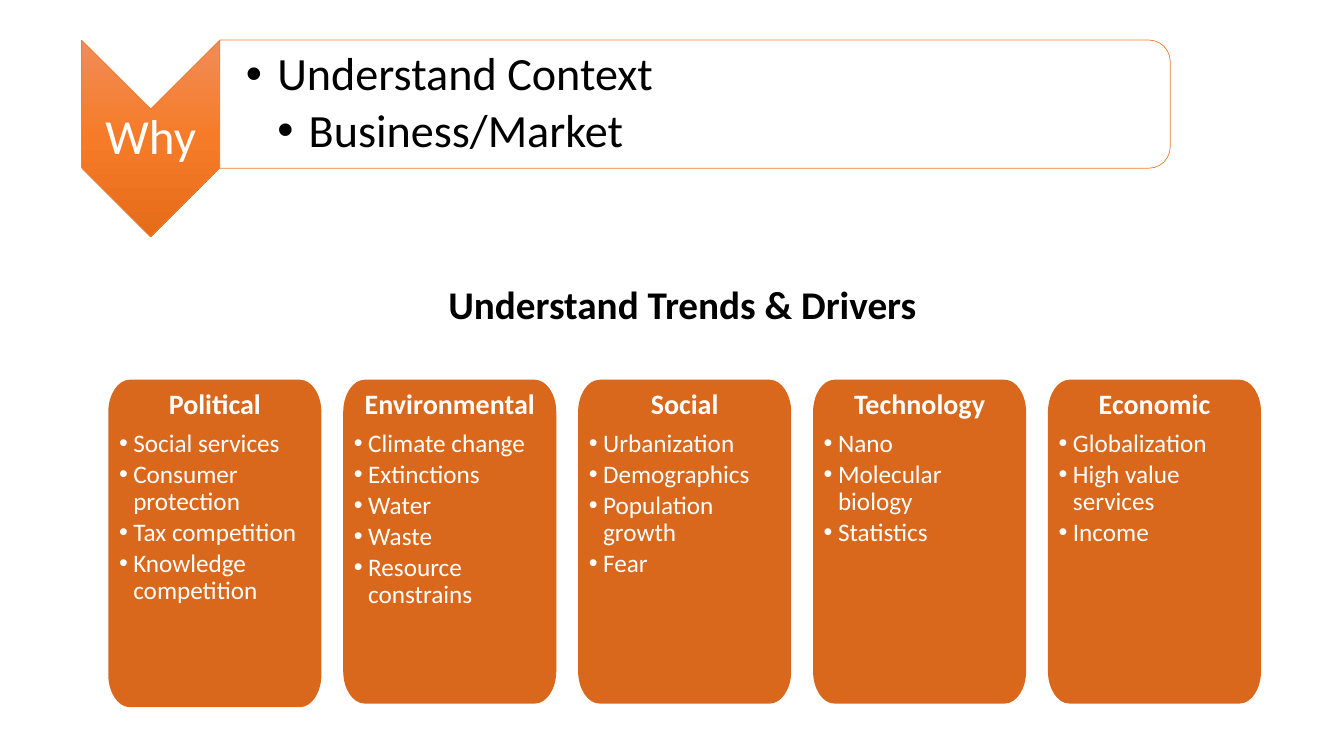
from lxml import etree
from pptx import Presentation
from pptx import util as u
from pptx.dml.color import RGBColor
from pptx.enum import shapes, text
from pptx.oxml import parse_xml
from pptx.oxml.ns import nsdecls, qn

FONT = "Calibri"
WHITE = RGBColor(0xFF, 0xFF, 0xFF)
BLACK = RGBColor(0x00, 0x00, 0x00)
ORANGE = RGBColor(0xED, 0x7D, 0x31)
CARD_ORANGE = RGBColor(0xD9, 0x68, 0x1C)
CHEVRON_STOPS = [(0, "F18C57"), (50, "F67B28"), (100, "E56C19")]

CARDS = [
    ("Political", ["Social services", "Consumer protection",
                   "Tax competition", "Knowledge competition"]),
    ("Environmental", ["Climate change", "Extinctions", "Water", "Waste",
                       "Resource constrains"]),
    ("Social", ["Urbanization", "Demographics", "Population growth", "Fear"]),
    ("Technology", ["Nano", "Molecular biology", "Statistics"]),
    ("Economic", ["Globalization", "High value services", "Income"]),
]
CARD_LEFT, CARD_TOP, CARD_PITCH, CARD_WIDTH = 2.73, 9.57, 5.92, 5.37
FIRST_CARD_HEIGHT, CARD_HEIGHT = 8.25, 8.16
CORNER_WIDTH, CORNER_HEIGHT = 0.54, 0.82
ROUNDNESS = 0.55


def add_bullet(para, level, indent):
    """Hang a round bullet, one indent deeper for each level."""
    para.level = level
    props = para._p.get_or_add_pPr()
    props.set("marL", str(u.Cm(indent * level)))
    props.set("indent", str(-u.Cm(indent)))
    etree.SubElement(props, qn("a:buFont")).set("typeface", "Arial")
    etree.SubElement(props, qn("a:buChar")).set("char", "•")


def add_text(frame, words, size, color=WHITE, bold=False, align=None,
             spacing=None, after=0, level=0, indent=0):
    """Write one paragraph, filling the frame's empty first one if it can."""
    first = frame.paragraphs[0]
    para = frame.add_paragraph() if first.runs else first
    para.alignment = align or text.PP_ALIGN.LEFT
    para.line_spacing = spacing
    para.space_after = u.Pt(after)
    if level:
        add_bullet(para, level, indent)
    span = para.add_run()
    span.text = words
    span.font.name = FONT
    span.font.size = u.Pt(size)
    span.font.bold = bold
    span.font.color.rgb = color


def set_insets(frame, inset, left=None):
    frame.margin_left = u.Cm(inset if left is None else left)
    frame.margin_right = frame.margin_top = frame.margin_bottom = u.Cm(inset)


def add_text_area(page, left, top, width, height, inset_left=0.05):
    """Add a wrapping, vertically centred text box and give its frame."""
    box = page.shapes.add_textbox(*map(u.Cm, (left, top, width, height)))
    frame = box.text_frame
    frame.word_wrap = True
    frame.vertical_anchor = text.MSO_ANCHOR.MIDDLE
    set_insets(frame, 0.05, inset_left)
    return frame


def add_turned_shape(page, kind, left, top, width, height):
    """Add an outlined shape turned a quarter clockwise."""
    shape = page.shapes.add_shape(kind, *map(u.Cm, (left, top, width, height)))
    shape.rotation = 90
    shape.shadow.inherit = False
    shape.line.color.rgb = ORANGE
    shape.line.width = u.Pt(0.5)
    return shape


def fill_downwards(shape, stops):
    """Fill with a gradient that runs down the page whatever the rotation."""
    marks = "".join(f'<a:gs pos="{share * 1000}"><a:srgbClr val="{color}"/></a:gs>'
                    for share, color in stops)
    gradient = parse_xml(
        f'<a:gradFill {nsdecls("a")} rotWithShape="0"><a:gsLst>{marks}</a:gsLst>'
        '<a:lin ang="5400000" scaled="0"/></a:gradFill>')
    shape._element.spPr.find(qn("a:prstGeom")).addnext(gradient)


def fill_translucent(shape, color, percent):
    shape.fill.solid()
    shape.fill.fore_color.rgb = color
    tint = shape._element.spPr.find(qn("a:solidFill")).find(qn("a:srgbClr"))
    etree.SubElement(tint, qn("a:alpha")).set("val", str(percent * 1000))


def card_outline(left, top, width, height):
    """Give the points where corners meet sides, clockwise from the left side."""
    right, bottom = left + width, top + height
    inner_left, inner_right = left + CORNER_WIDTH, right - CORNER_WIDTH
    inner_top, inner_bottom = top + CORNER_HEIGHT, bottom - CORNER_HEIGHT
    points = [(left, inner_top), (inner_left, top),
              (inner_right, top), (right, inner_top),
              (right, inner_bottom), (inner_right, bottom),
              (inner_left, bottom), (left, inner_bottom)]
    return [(u.Cm(x), u.Cm(y)) for x, y in points]


def round_corners(card):
    """Turn every second segment of the card's outline into a quarter ellipse."""
    points = list(card._element.iter(qn("a:pt")))
    places = [(int(point.get("x")), int(point.get("y"))) for point in points]
    for number in range(0, len(points) - 1, 2):
        start, end = places[number], places[number + 1]
        upright = number % 4 == 0
        corner = (start[0], end[1]) if upright else (end[0], start[1])
        curve = etree.Element(qn("a:cubicBezTo"))
        controls = [[round(a + (b - a) * ROUNDNESS) for a, b in zip(side, corner)]
                    for side in (start, end)]
        for x, y in [*controls, end]:
            etree.SubElement(curve, qn("a:pt"), x=str(x), y=str(y))
        line = points[number + 1].getparent()
        line.getparent().replace(line, curve)


def add_card(page, left, height, heading, items):
    points = card_outline(left, CARD_TOP, CARD_WIDTH, height)
    builder = page.shapes.build_freeform(*points[0])
    builder.add_line_segments(points[1:], close=True)
    card = builder.convert_to_shape()
    round_corners(card)
    card.shadow.inherit = False
    card.fill.solid()
    card.fill.fore_color.rgb = CARD_ORANGE
    card.line.fill.background()
    frame = card.text_frame
    frame.word_wrap = True
    frame.vertical_anchor = text.MSO_ANCHOR.TOP
    set_insets(frame, 0.27)
    add_text(frame, heading, 20, bold=True, align=text.PP_ALIGN.CENTER,
             spacing=0.9, after=7)
    for item in items:
        add_text(frame, item, 18, spacing=0.9, after=2.7, level=1, indent=0.36)


def add_why_banner(page):
    kinds = shapes.MSO_SHAPE
    chevron = add_turned_shape(page, kinds.CHEVRON, 1.32, 1.75, 4.95, 3.48)
    fill_downwards(chevron, CHEVRON_STOPS)
    label = add_text_area(page, 2.06, 2.74, 3.48, 1.5)
    add_text(label, "Why", 35, align=text.PP_ALIGN.CENTER, spacing=0.9)

    panel = add_turned_shape(page, kinds.ROUND_2_SAME_RECTANGLE,
                             15.9, -9.35, 3.23, 23.95)
    fill_translucent(panel, WHITE, 90)
    body = add_text_area(page, 5.54, 1.17, 23.8, 2.92, inset_left=0.66)
    for level, words in enumerate(["Understand Context", "Business/Market"], 1):
        add_text(body, words, 33, BLACK, spacing=0.9, after=5,
                 level=level, indent=0.79)


def add_trends_heading(page):
    box = page.shapes.add_textbox(*map(u.Cm, (11.05, 6.94, 12.45, 1.45)))
    box.text_frame.word_wrap = False
    box.text_frame.auto_size = text.MSO_AUTO_SIZE.SHAPE_TO_FIT_TEXT
    add_text(box.text_frame, "Understand Trends & Drivers", 28, BLACK, bold=True)


def main():
    deck = Presentation()
    deck.slide_width, deck.slide_height = u.Cm(33.87), u.Cm(19.05)
    page = deck.slides.add_slide(deck.slide_layouts[6])
    add_why_banner(page)
    for number, (heading, items) in enumerate(CARDS):
        height = CARD_HEIGHT if number else FIRST_CARD_HEIGHT
        add_card(page, CARD_LEFT + number * CARD_PITCH, height, heading, items)
    add_trends_heading(page)
    deck.save("out.pptx")


if __name__ == "__main__":
    main()
